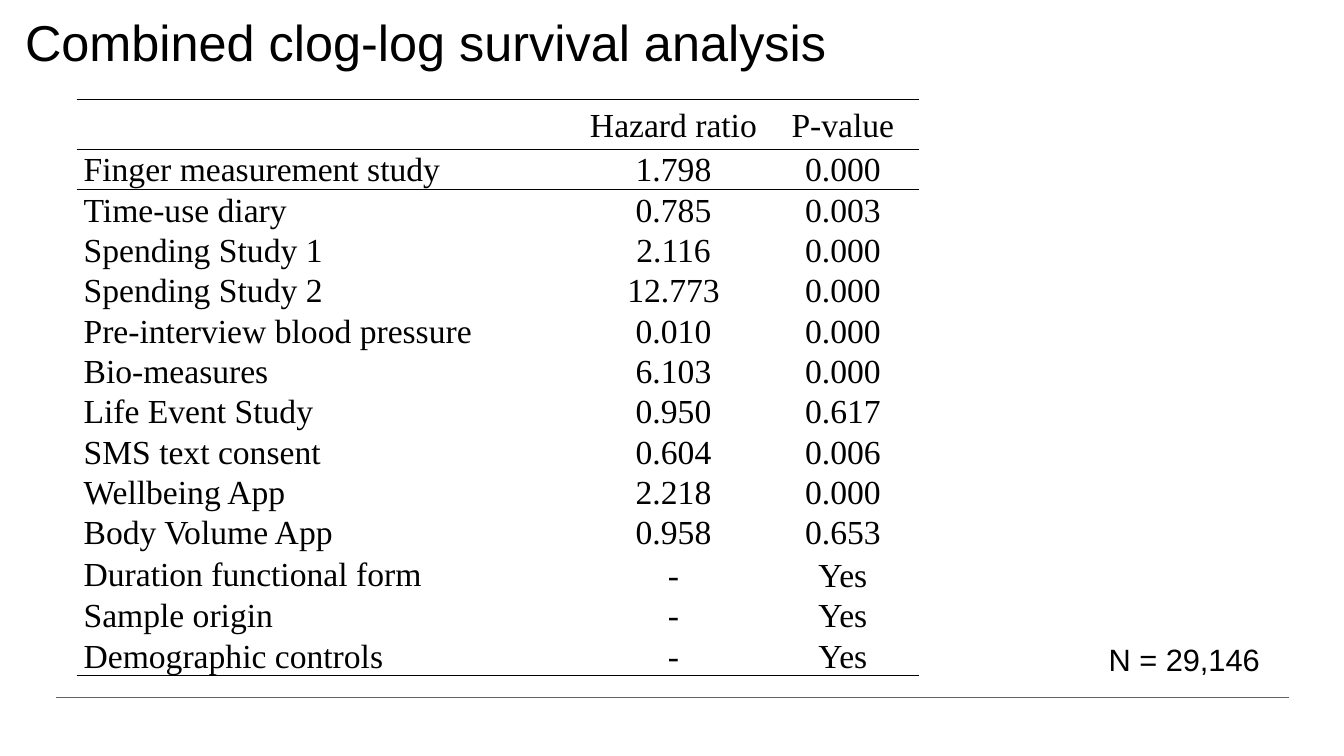
"""Build the survival analysis slide with its table of hazard ratios."""
from lxml.etree import SubElement
from pptx import Presentation
from pptx.dml.color import RGBColor
from pptx.enum.shapes import MSO_CONNECTOR
from pptx.enum.text import MSO_ANCHOR, PP_ALIGN
from pptx.oxml.ns import qn
from pptx.util import Inches, Pt

TITLE = "Combined clog-log survival analysis"
SAMPLE_SIZE = "N = 29,146"
ROWS = [
    ("", "Hazard ratio", "P-value"),
    ("Finger measurement study", "1.798", "0.000"),
    ("Time-use diary", "0.785", "0.003"),
    ("Spending Study 1", "2.116", "0.000"),
    ("Spending Study 2", "12.773", "0.000"),
    ("Pre-interview blood pressure", "0.010", "0.000"),
    ("Bio-measures", "6.103", "0.000"),
    ("Life Event Study", "0.950", "0.617"),
    ("SMS text consent", "0.604", "0.006"),
    ("Wellbeing App", "2.218", "0.000"),
    ("Body Volume App", "0.958", "0.653"),
    ("Duration functional form", "-", "Yes"),
    ("Sample origin", "-", "Yes"),
    ("Demographic controls", "-", "Yes"),
]
COL_WIDTHS = (5, 1.84, 1.52)
ROW_HEIGHT = 0.4
SPECIAL_HEIGHTS = {0: 0.49, 11: 0.42}
RULES = {0: ("a:lnT", "a:lnB"), 1: ("a:lnT",), len(ROWS) - 1: ("a:lnB",)}
NO_STYLE = "{2D5ABB26-0587-4C30-8999-92F81FD0307C}"
BLACK, GREY = "000000", "626464"


def color(value):
    return RGBColor.from_string(value)


def style(p, font, size, align, spacing):
    p.alignment, p.line_spacing = align, spacing
    p.font.name, p.font.size = font, Pt(size)
    p.font.color.rgb = color(BLACK)


def add_text(slide, text, box, size, align, spacing):
    tf = slide.shapes.add_textbox(*map(Inches, box)).text_frame
    tf.word_wrap = True
    p = tf.paragraphs[0]
    p.text = text
    style(p, "Arial", size, align, spacing)


def add_border(cell, side):
    ln = SubElement(cell._tc.get_or_add_tcPr(), qn(side), w=str(Pt(1)))
    fill = SubElement(ln, qn("a:solidFill"))
    SubElement(fill, qn("a:srgbClr"), val=BLACK)


def fill_cell(cell, text, row, col):
    for side in RULES.get(row, ()):
        add_border(cell, side)
    cell.fill.background()
    cell.vertical_anchor = MSO_ANCHOR.MIDDLE
    cell.margin_left = cell.margin_right = Inches(0.07)
    cell.margin_top = cell.margin_bottom = 0
    p = cell.text_frame.paragraphs[0]
    p.text = text
    loose = row == 11 and col > 0
    style(p, "Times New Roman", 24, PP_ALIGN.CENTER if col else PP_ALIGN.LEFT,
          1.15 if loose else 1.07)
    p.space_after = Pt(0 if loose else 8)


def add_results(slide):
    heights = [SPECIAL_HEIGHTS.get(i, ROW_HEIGHT) for i in range(len(ROWS))]
    box = (0.76, 0.99, sum(COL_WIDTHS), sum(heights))
    table = slide.shapes.add_table(len(ROWS), len(COL_WIDTHS), *map(Inches, box)).table
    table.first_row = table.horz_banding = False
    table._tbl.tblPr.find(qn("a:tableStyleId")).text = NO_STYLE
    for column, width in zip(table.columns, COL_WIDTHS):
        column.width = Inches(width)
    for i, (values, height) in enumerate(zip(ROWS, heights)):
        table.rows[i].height = Inches(height)
        for j, text in enumerate(values):
            fill_cell(table.cell(i, j), text, i, j)


def add_footer_rule(slide):
    ends = (0.56, 6.92, 12.78, 6.92)
    line = slide.shapes.add_connector(MSO_CONNECTOR.STRAIGHT, *map(Inches, ends))
    line.line.color.rgb = color(GREY)
    line.line.width = Pt(0.5)
    SubElement(line._element.spPr, qn("a:effectLst"))


def main():
    prs = Presentation()
    prs.slide_width, prs.slide_height = Inches(13.33), Inches(7.5)
    slide = prs.slides.add_slide(prs.slide_layouts[6])
    add_footer_rule(slide)
    add_results(slide)
    add_text(slide, TITLE, (0.15, 0.13, 10.33, 1.25), 36, PP_ALIGN.LEFT, 0.9)
    add_text(slide, SAMPLE_SIZE, (10.29, 6.27, 2.91, 1.11), 22, PP_ALIGN.CENTER, 1.1)
    prs.save("out.pptx")


if __name__ == "__main__":
    main()
